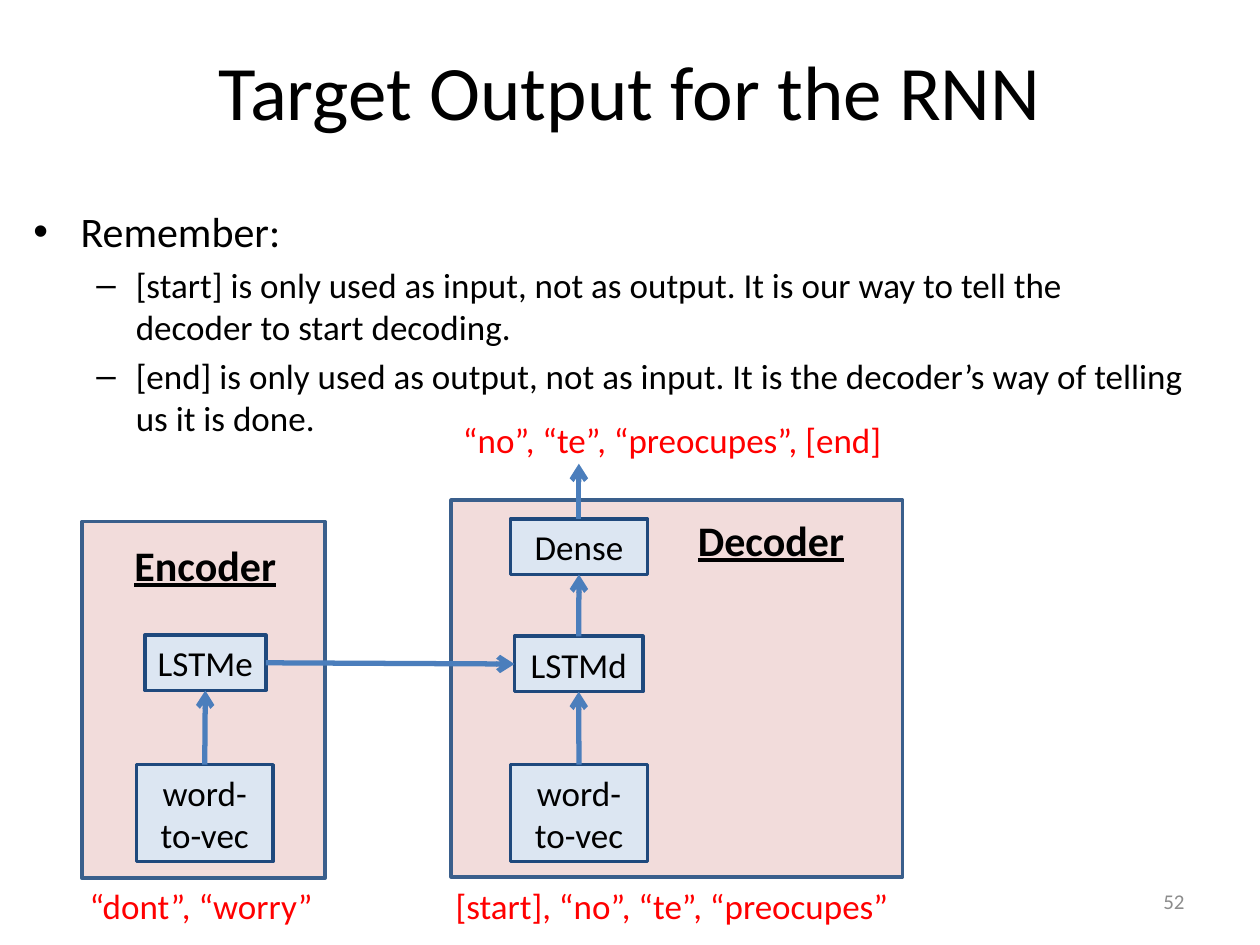
from lxml.etree import SubElement
from pptx import Presentation
from pptx.dml.color import RGBColor
from pptx.enum.shapes import MSO_CONNECTOR as Connector, MSO_SHAPE as Shape
from pptx.enum.text import MSO_ANCHOR as Anchor, PP_ALIGN as Align
from pptx.oxml.ns import qn
from pptx.util import Pt

BLACK = RGBColor(0x00, 0x00, 0x00)
RED = RGBColor(0xFF, 0x00, 0x00)
GRAY = RGBColor(0x8C, 0x8C, 0x8C)
PINK = RGBColor(0xF2, 0xDC, 0xDB)
PALE_BLUE = RGBColor(0xDC, 0xE6, 0xF2)
PANEL_EDGE = RGBColor(0x3A, 0x5F, 0x8C)
NODE_EDGE = RGBColor(0x1F, 0x49, 0x7D)
ARROW_BLUE = RGBColor(0x4B, 0x7E, 0xBC)

TOP, LEFT, BOTTOM, RIGHT = range(4)  # connection sites of a rectangle

# Per outline level: bullet sign, text size, left margin, hanging indent
LEVELS = [("•", 24, 27, 27), ("–", 20, 58.5, 22.5)]


class SlideBuilder:
    """Holds the page and the shared style; all lengths are in points."""

    font = "Calibri"

    def __init__(self, page):
        self.page = page

    def format(self, paragraph, size, color=BLACK, heading=False):
        for span in paragraph.runs:
            span.font.name = self.font
            span.font.size = Pt(size)
            span.font.color.rgb = color
            if heading:
                span.font.bold = span.font.underline = True

    def title(self, text, left, top, width, height):
        box = self.page.shapes.title
        box.left, box.top, box.width, box.height = map(Pt, (left, top, width, height))
        box.text_frame.text = text
        box.text_frame.vertical_anchor = Anchor.MIDDLE
        paragraph = box.text_frame.paragraphs[0]
        paragraph.alignment = Align.CENTER
        self.format(paragraph, 44)

    def text(self, text, left, top, width, height, size=20, color=RED,
             align=Align.CENTER, anchor=Anchor.TOP, heading=False):
        box = self.page.shapes.add_textbox(*map(Pt, (left, top, width, height)))
        frame = box.text_frame
        frame.text = text
        frame.word_wrap = False
        frame.vertical_anchor = anchor
        paragraph = frame.paragraphs[0]
        paragraph.alignment = align
        self.format(paragraph, size, color, heading)

    def heading(self, text, left, top, width):
        self.text(text, left, top, width, 36, 24, BLACK, Align.LEFT, heading=True)

    def bullets(self, items, left, top, width, height):
        box = self.page.shapes.add_textbox(*map(Pt, (left, top, width, height)))
        frame = box.text_frame
        frame.word_wrap = True
        frame.text = "\n".join(text for _, text in items)
        for paragraph, (level, _) in zip(frame.paragraphs, items):
            sign, size, margin, hanging = LEVELS[level]
            paragraph.level = level
            paragraph.space_before = Pt(0.2 * size)
            self.format(paragraph, size)
            properties = paragraph._p.get_or_add_pPr()
            properties.set("marL", str(Pt(margin)))
            properties.set("indent", str(-Pt(hanging)))
            SubElement(properties, qn("a:buFont"), typeface="Arial")
            SubElement(properties, qn("a:buChar"), char=sign)

    def panel(self, left, top, width, height, fill=PINK, edge=PANEL_EDGE):
        box = self.page.shapes.add_shape(
            Shape.RECTANGLE, *map(Pt, (left, top, width, height)))
        box.shadow.inherit = False
        box.fill.solid()
        box.fill.fore_color.rgb = fill
        box.line.color.rgb = edge
        box.line.width = Pt(2)
        return box

    def node(self, text, left, top, width, height=31.7):
        box = self.panel(left, top, width, height, PALE_BLUE, NODE_EDGE)
        frame = box.text_frame
        frame.text = text
        frame.word_wrap = False
        frame.vertical_anchor = Anchor.MIDDLE
        frame.paragraphs[0].alignment = Align.CENTER
        self.format(frame.paragraphs[0], 20)
        return box

    def arrow(self, x1=0, y1=0, x2=0, y2=0):
        line = self.page.shapes.add_connector(
            Connector.STRAIGHT, *map(Pt, (x1, y1, x2, y2)))
        line.line.color.rgb = ARROW_BLUE
        line.line.width = Pt(3)
        SubElement(line.line._get_or_add_ln(), qn("a:tailEnd"), type="arrow")
        SubElement(line._element.spPr, qn("a:effectLst"))
        return line

    def link(self, source, target, exit_site=TOP, entry_site=BOTTOM):
        line = self.arrow()
        line.begin_connect(source, exit_site)
        line.end_connect(target, entry_site)


def main():
    deck = Presentation()
    deck.slide_width, deck.slide_height = Pt(720), Pt(540)
    slide = SlideBuilder(deck.slides.add_slide(deck.slide_layouts[5]))

    slide.title("Target Output for the RNN", 36, 12.2, 648, 78)
    slide.bullets([
        (0, "Remember:"),
        (1, "[start] is only used as input, not as output. It is our way to "
            "tell the decoder to start decoding."),
        (1, "[end] is only used as output, not as input. It is the decoder’s "
            "way of telling us it is done."),
    ], 12, 114, 672, 234)
    slide.text("52", 516, 500.5, 168, 28.8, 12, GRAY, Align.RIGHT, Anchor.MIDDLE)

    slide.panel(257.8, 285.8, 258, 215.3)
    slide.heading("Decoder", 391.7, 290.2, 100)
    slide.panel(46.8, 298.1, 139, 203.8)
    slide.heading("Encoder", 69.8, 304.6, 96.5)

    encoder_words = slide.node("word-\vto-vec", 78, 437, 78, 55.4)
    encoder_lstm = slide.node("LSTMe", 82.8, 362.9, 69.1)
    decoder_words = slide.node("word-\vto-vec", 291.6, 437, 78.5, 55.4)
    decoder_lstm = slide.node("LSTMd", 294, 363.6, 73.4)
    dense = slide.node("Dense", 291.6, 296.6, 78.5)

    slide.link(encoder_words, encoder_lstm)
    slide.link(encoder_lstm, decoder_lstm, RIGHT, LEFT)
    slide.link(decoder_words, decoder_lstm)
    slide.link(decoder_lstm, dense)
    slide.arrow(330.8, 296.6, 330.8, 265)

    slide.text("“dont”, “worry”", 44, 501.8, 142, 31.7)
    slide.text("[start], “no”, “te”, “preocupes”", 252, 501.8, 264, 31.7)
    slide.text("“no”, “te”, “preocupes”, [end]", 256.3, 235.4, 255.6, 31.7)

    deck.save("out.pptx")


if __name__ == "__main__":
    main()
